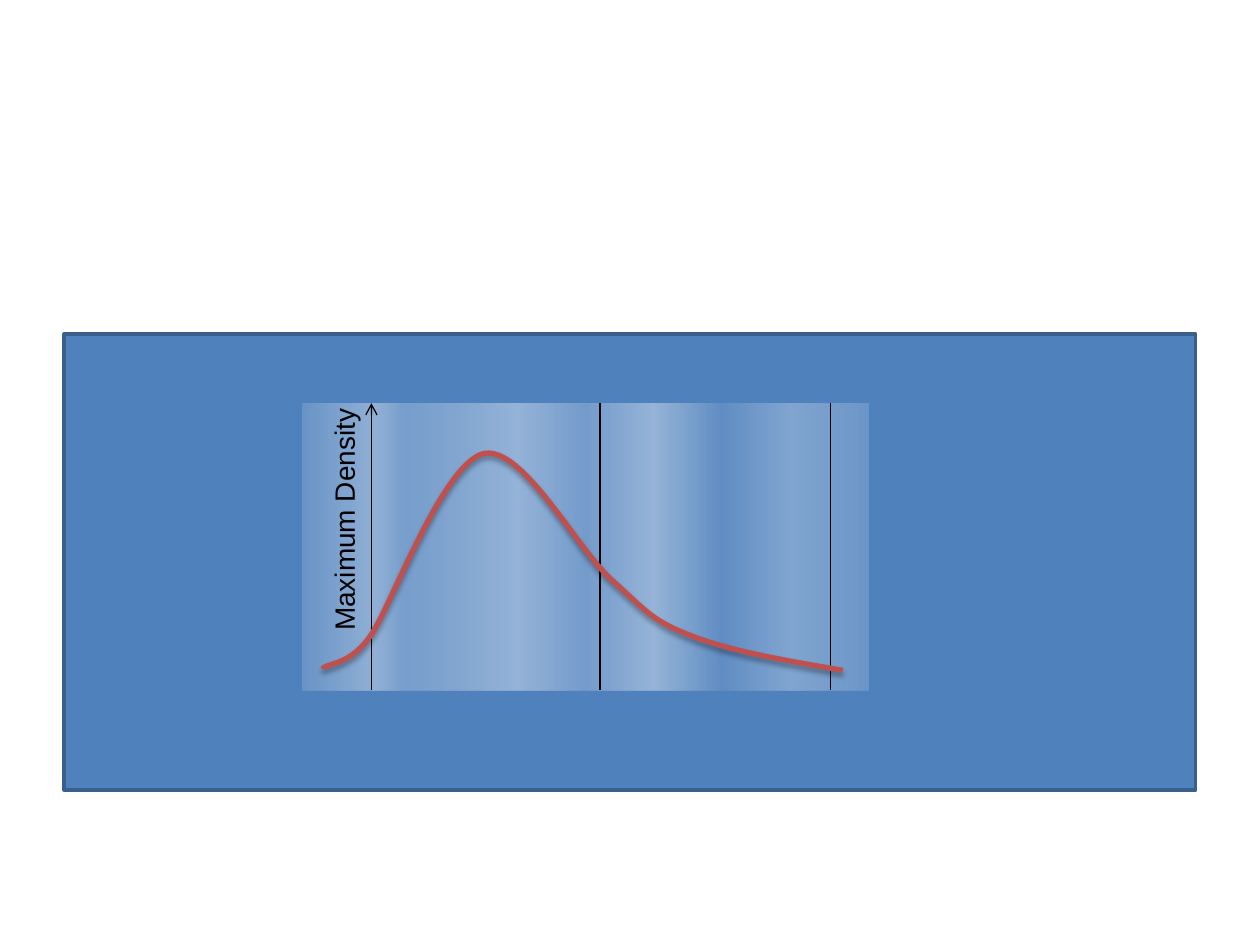
from collections import namedtuple

from lxml.etree import SubElement
from pptx import Presentation
from pptx.dml.color import RGBColor
from pptx.enum.shapes import MSO_CONNECTOR, MSO_SHAPE
from pptx.enum.text import MSO_ANCHOR, MSO_AUTO_SIZE, PP_ALIGN
from pptx.oxml.ns import qn
from pptx.util import Inches, Pt

BLUE = RGBColor(0x4F, 0x81, 0xBD)
DARK_BLUE = RGBColor(0x3A, 0x5F, 0x8C)
RED = RGBColor(0xC0, 0x50, 0x4D)
BLACK = RGBColor(0, 0, 0)

# Position, colour and opacity, with position and opacity in percent
BAND_STOPS = [
    (0, RGBColor(0xF6, 0xF9, 0xFC), 15), (13, RGBColor(0xF8, 0xFA, 0xFD), 39),
    (18, RGBColor(0xF9, 0xFA, 0xFD), 23), (27, RGBColor(0xFA, 0xFB, 0xFE), 29),
    (38, RGBColor(0xFB, 0xFC, 0xFE), 40), (50, RGBColor(0xFC, 0xFC, 0xFE), 21),
    (62, RGBColor(0xFE, 0xFE, 0xFF), 40), (74, RGBColor(0xFF, 0xFF, 0xFF), 9),
    (86, RGBColor(0xFF, 0xFF, 0xFF), 28), (100, RGBColor(0xFF, 0xFF, 0xFF), 16),
]

# Bezier points in percent of the plot: a start, then two controls and an end each
DENSITY_CURVE = [
    (3.6, 92.5),
    (4, 90.4), (8.9, 91.7), (12.7, 78.9),
    (16.5, 66.2), (25.2, 20.6), (32.1, 17.5),
    (39, 14.9), (48.6, 50.9), (54.6, 61.4),
    (60.6, 71.9), (61.5, 75.4), (68.4, 80.7),
    (75.1, 86), (83.7, 89), (95.5, 93),
]
CURVE_STEPS = 24


class Box(namedtuple("Box", "left top width height")):
    def point(self, across, down):
        """Return the place at the given percentages of the box."""
        return (int(self.left + self.width * across / 100),
                int(self.top + self.height * down / 100))


def add_rectangle(page, box):
    shape = page.shapes.add_shape(MSO_SHAPE.RECTANGLE, *box)
    shape.shadow.inherit = False
    return shape


def add_backdrop(page, box):
    backdrop = add_rectangle(page, box)
    backdrop.fill.solid()
    backdrop.fill.fore_color.rgb = BLUE
    backdrop.line.color.rgb = DARK_BLUE
    backdrop.line.width = Pt(2)


def add_color(parent, color, opacity):
    node = SubElement(parent, qn("a:srgbClr"), val=str(color))
    SubElement(node, qn("a:alpha"), val=str(opacity * 1000))


def add_bands(page, box):
    bands = add_rectangle(page, box)
    bands.line.fill.background()
    bands.fill.gradient()
    bands.fill.gradient_angle = 0
    stops = bands.element.spPr.find(qn("a:gradFill")).find(qn("a:gsLst"))
    for stop in list(stops):
        stops.remove(stop)
    for position, color, opacity in BAND_STOPS:
        stop = SubElement(stops, qn("a:gs"), pos=str(position * 1000))
        add_color(stop, color, opacity)


def add_vertical(page, box, across, arrow=False):
    line = page.shapes.add_connector(
        MSO_CONNECTOR.STRAIGHT, *box.point(across, 0), *box.point(across, 100))
    line.line.color.rgb = BLACK
    line.line.width = Pt(0.75)
    properties = line.element.spPr
    if arrow:
        SubElement(properties.find(qn("a:ln")), qn("a:headEnd"), type="arrow")
    SubElement(properties, qn("a:effectLst"))


def bezier_points(points):
    """Yield points along the chained cubic curves, after the start."""
    for first in range(0, len(points) - 1, 3):
        piece = points[first:first + 4]
        for step in range(1, CURVE_STEPS + 1):
            t = step / CURVE_STEPS
            weights = ((1 - t) ** 3, 3 * t * (1 - t) ** 2, 3 * t * t * (1 - t), t ** 3)
            yield tuple(sum(weight * point[axis] for weight, point in zip(weights, piece))
                        for axis in (0, 1))


def add_curve(page, box):
    builder = page.shapes.build_freeform(*box.point(*DENSITY_CURVE[0]))
    builder.add_line_segments(
        [box.point(*point) for point in bezier_points(DENSITY_CURVE)], close=False)
    curve = builder.convert_to_shape()
    curve.fill.background()
    curve.line.color.rgb = RED
    curve.line.width = Pt(3)
    curve.shadow.inherit = False
    effects = curve.element.spPr.find(qn("a:effectLst"))
    shadow = SubElement(effects, qn("a:outerShdw"), blurRad=str(Pt(3.1)),
                        dist=str(Pt(1.8)), dir="5400000", rotWithShape="0")
    add_color(shadow, BLACK, 35)


def add_text(page, text, center, width, height, size=16, color=BLACK,
             font="Arial", rotation=0):
    label = page.shapes.add_textbox(
        int(center[0] - width / 2), int(center[1] - height / 2), width, height)
    label.rotation = rotation
    frame = label.text_frame
    frame.word_wrap = False
    frame.auto_size = MSO_AUTO_SIZE.SHAPE_TO_FIT_TEXT
    frame.vertical_anchor = MSO_ANCHOR.TOP
    para = frame.paragraphs[0]
    para.alignment = PP_ALIGN.LEFT
    span = para.add_run()
    span.text = text
    span.font.name = font
    span.font.size = Pt(size)
    span.font.color.rgb = color


def add_density_plot(page, box):
    add_bands(page, box)
    add_vertical(page, box, 52.6)
    add_vertical(page, box, 12.2, arrow=True)
    add_vertical(page, box, 93.3)
    add_curve(page, box)
    add_text(page, "Maximum Density", box.point(7.35, 40.1),
             Inches(1.98), Inches(0.37), rotation=270)


def main():
    deck = Presentation()
    deck.slide_width, deck.slide_height = Inches(10), Inches(7.5)
    page = deck.slides.add_slide(deck.slide_layouts[6])
    add_backdrop(page, Box(*map(Inches, (0.51, 2.65, 8.98, 3.62))))
    add_density_plot(page, Box(*map(Inches, (2.4, 3.2, 4.49, 2.28))))
    deck.save("out.pptx")


if __name__ == "__main__":
    main()
